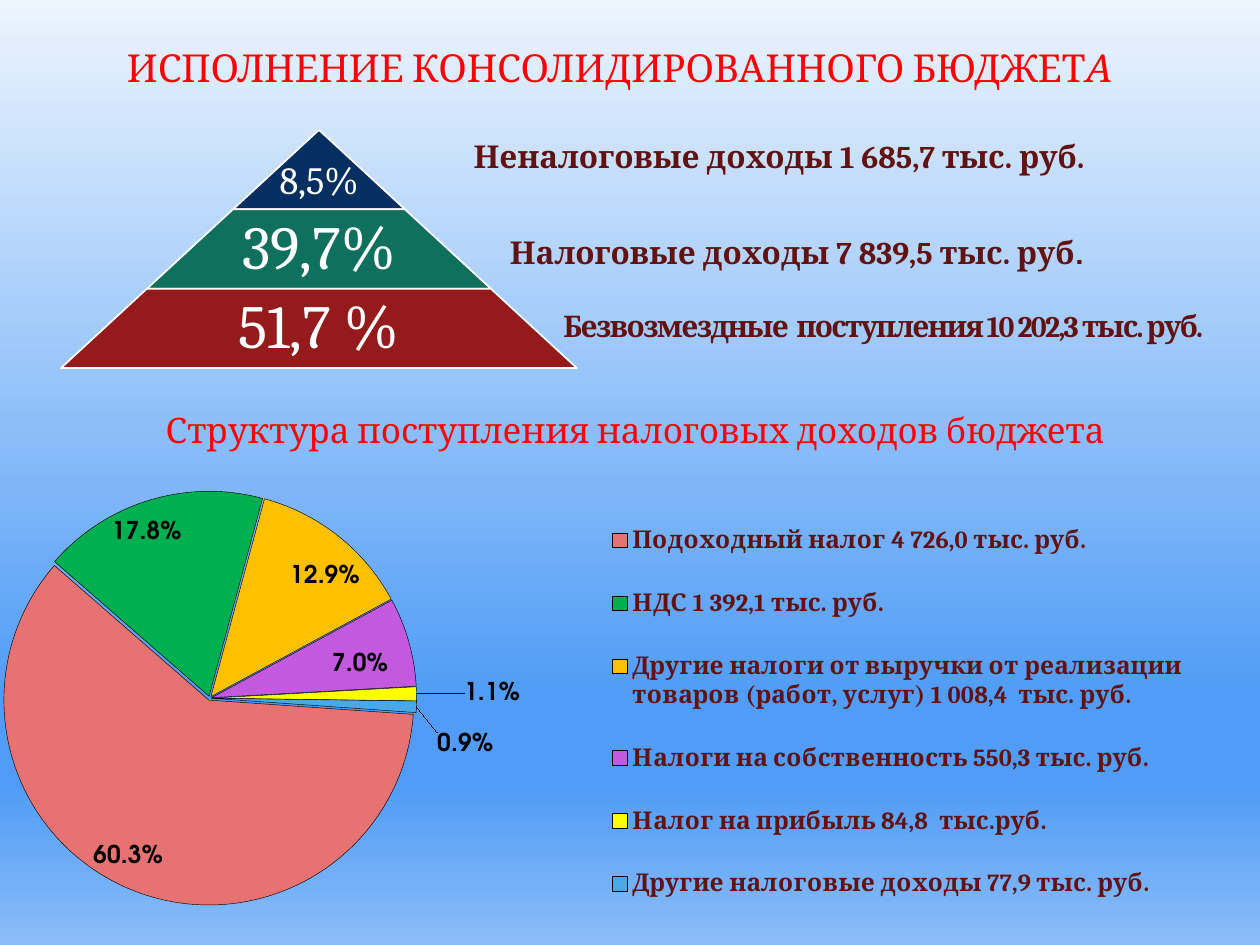
from pptx import Presentation
from pptx.chart.data import CategoryChartData
from pptx.dml.color import RGBColor
from pptx.enum.chart import XL_CHART_TYPE, XL_LABEL_POSITION as LabelPosition, XL_LEGEND_POSITION
from pptx.enum.shapes import MSO_SHAPE
from pptx.enum.text import MSO_ANCHOR as Anchor, PP_ALIGN as Align
from pptx.oxml import parse_xml
from pptx.oxml.ns import nsdecls, qn
from pptx.util import Cm, Pt

SERIF, SANS = "Cambria", "TeX Gyre Adventor"
RED, MAROON, WHITE, BLACK = "FF0000", "631212", "FFFFFF", "000000"

BACKGROUND_STOPS = [(0, "ECF4FE"), (74, "509CF6"), (83, "509CF6"), (100, "8BBDF9")]

# text, size, fill, top inset in cm; from the peak to the base
PYRAMID_LEVELS = [
    ("8,5%", 22, "052F61", 0.54),
    ("39,7%", 35, "0F705D", 0.15),
    ("51,7 %", 35, "941A1B", 0.15),
]

# name, share, fill, label position, label shift as a share of the chart
TAXES = [
    ("Подоходный налог 4 726,0 тыс. руб.", 0.603, "E67272",
     LabelPosition.INSIDE_END, (-0.03, -0.03)),
    ("НДС 1 392,1 тыс. руб.", 0.178, "00B050", LabelPosition.INSIDE_END, (-0.03, 0.03)),
    ("Другие налоги от выручки от реализации товаров (работ, услуг) 1 008,4  тыс. руб.",
     0.129, "FFC000", LabelPosition.INSIDE_END, (0.02, 0.05)),
    ("Налоги на собственность 550,3 тыс. руб.", 0.07, "C259DF",
     LabelPosition.INSIDE_END, (-0.01, 0.02)),
    ("Налог на прибыль 84,8  тыс.руб.", 0.011, "FFFF00",
     LabelPosition.OUTSIDE_END, (0.03, 0)),
    ("Другие налоговые доходы 77,9 тыс. руб.", 0.009, "4AA8E7",
     LabelPosition.OUTSIDE_END, (0.01, 0.08)),
]


def color(value):
    return RGBColor.from_string(value)


def set_font(font, size, value, name=SERIF, bold=False, italic=False):
    font.size, font.name, font.bold, font.italic = Pt(size), name, bold, italic
    font.color.rgb = color(value)


def add_text(slide, box, runs, size, value, bold=False, align=Align.LEFT, anchor=Anchor.TOP,
             insets=(0.25, 0.13, 0.25, 0.13), before=0, line=1.0, spacing=0):
    """Add one paragraph; runs is a string or a list of (text, font overrides)."""
    frame = slide.shapes.add_textbox(*map(Cm, box)).text_frame
    frame.word_wrap = True
    frame.vertical_anchor = anchor
    (frame.margin_left, frame.margin_top,
     frame.margin_right, frame.margin_bottom) = map(Cm, insets)
    paragraph = frame.paragraphs[0]
    paragraph.alignment, paragraph.line_spacing = align, line
    paragraph.space_before = Pt(before)
    for text, overrides in [(runs, {})] if isinstance(runs, str) else runs:
        run = paragraph.add_run()
        run.text = text
        set_font(run.font, size, value, **{"bold": bold, **overrides})
        if spacing:
            run.font._element.set("spc", str(spacing * 100))


def set_background(slide):
    fill = slide.background.fill
    fill.gradient()
    fill.gradient_angle = 270
    stop_list = slide.background._cSld.find(".//" + qn("a:gsLst"))
    for stop in list(stop_list):
        stop_list.remove(stop)
    for position, value in BACKGROUND_STOPS:
        stop_list.append(parse_xml(
            f'<a:gs {nsdecls("a")} pos="{position * 1000}"><a:srgbClr val="{value}"/></a:gs>'))


def add_pyramid(slide, left, top, width, height):
    level_height = height / len(PYRAMID_LEVELS)
    step = width / len(PYRAMID_LEVELS)
    for index, (text, size, fill, top_inset) in enumerate(PYRAMID_LEVELS):
        level_width = step * (index + 1)
        box = (left + (width - level_width) / 2, top + index * level_height,
               level_width, level_height)
        shape = slide.shapes.add_shape(MSO_SHAPE.TRAPEZOID, *map(Cm, box))
        shape.adjustments[0] = step / 2 / level_height
        shape.shadow.inherit = False
        shape.fill.solid()
        shape.fill.fore_color.rgb = color(fill)
        shape.line.color.rgb = color(WHITE)
        shape.line.width = Pt(1)
        add_text(slide, box, text, size, WHITE, align=Align.CENTER, anchor=Anchor.MIDDLE,
                 insets=(0.03, top_inset, 0.03, 0.03 if index == 0 else 0.13), line=0.9)


def add_income_labels(slide):
    style = {"value": MAROON, "bold": True}
    add_text(slide, (9.3, 2.64, 13.41, 1.02), "Неналоговые доходы 1 685,7 тыс. руб.", 18, **style)
    add_text(slide, (10.03, 4.57, 14.4, 1.02),
             [("Налоговые доходы 7 839,5 тыс. руб", {}), (".", {"name": SANS})], 18, **style)
    add_text(slide, (11.1, 6.07, 14, 0.99),
             "Безвозмездные  поступления 10 202,3 тыс. руб.", 17, spacing=-1, **style)


def make_layout(x, y, width=None, height=None, inner=False):
    """Manual chart layout; without a size, x and y shift the part from its usual place."""
    parts = [("layoutTarget", "inner")] if inner else []
    if width:
        parts += [("xMode", "edge"), ("yMode", "edge")]
    parts += [("x", x), ("y", y)]
    if width:
        parts += [("w", width), ("h", height)]
    body = "".join(f'<c:{tag} val="{value}"/>' for tag, value in parts)
    return parse_xml(f'<c:layout {nsdecls("c")}><c:manualLayout>{body}</c:manualLayout></c:layout>')


def format_slices(series):
    series._element.find(qn("c:tx")).addnext(
        parse_xml(f'<c:explosion {nsdecls("c")} val="1"/>'))
    for index, (_, _, fill, _, _) in enumerate(TAXES):
        slice_format = series.points[index].format
        slice_format.fill.solid()
        slice_format.fill.fore_color.rgb = color(fill)
        slice_format.line.color.rgb = color(BLACK)
        slice_format.line.width = Pt(0.25)


def format_labels(series):
    labels = series.data_labels
    labels.show_value = True
    labels.number_format, labels.number_format_is_linked = "0.0%", False
    set_font(labels.font, 14, BLACK, SANS, bold=True)
    for index, (_, _, _, position, shift) in enumerate(TAXES):
        label = series.points[index].data_label
        set_font(label.font, 14, BLACK, SANS, bold=True)
        label.position = position
        element = next(item for item in labels._element.findall(qn("c:dLbl"))
                       if item.find(qn("c:idx")).get("val") == str(index))
        element.find(qn("c:idx")).addnext(make_layout(*shift))


def add_tax_chart(slide, left, top, width, height):
    data = CategoryChartData(number_format="0.0%")
    data.categories = [tax[0] for tax in TAXES]
    data.add_series("Series 1", [tax[1] for tax in TAXES])
    chart = slide.shapes.add_chart(
        XL_CHART_TYPE.PIE, *map(Cm, (left, top, width, height)), data).chart
    chart.has_title = False
    set_font(chart.font, 18, "146194", SANS)
    plot = chart.plots[0]
    plot.vary_by_categories = True
    format_slices(plot.series[0])
    format_labels(plot.series[0])

    pie = plot._element
    for angle in pie.findall(qn("c:firstSliceAng")):
        pie.remove(angle)
    pie.append(parse_xml(f'<c:firstSliceAng {nsdecls("c")} val="94"/>'))
    plot_area = pie.getparent()
    for layout in plot_area.findall(qn("c:layout")):
        plot_area.remove(layout)
    plot_area.insert(0, make_layout(0.07, 0, 0.31, 0.92, inner=True))

    chart.has_legend = True
    legend = chart.legend
    legend.position = XL_LEGEND_POSITION.RIGHT
    legend.include_in_layout = False
    set_font(legend.font, 14, MAROON, bold=True)
    for layout in legend._element.findall(qn("c:layout")):
        legend._element.remove(layout)
    legend._element.find(qn("c:legendPos")).addnext(make_layout(0.51, 0.02, 0.46, 0.94))


def main():
    presentation = Presentation()
    presentation.slide_width, presentation.slide_height = Cm(25.4), Cm(19.05)
    slide = presentation.slides.add_slide(presentation.slide_layouts[6])
    set_background(slide)
    add_text(slide, (2.31, 0.11, 22.4, 1.83),
             [("ИСПОЛНЕНИЕ КОНСОЛИДИРОВАННОГО БЮДЖЕТ", {}), ("А", {"italic": True})],
             22, RED, anchor=Anchor.BOTTOM)
    add_text(slide, (2.01, 8.1, 21.59, 3.89), "Структура поступления налоговых доходов бюджета",
             20, RED, align=Align.CENTER, before=4)
    add_pyramid(slide, 1.23, 2.62, 10.4, 4.8)
    add_income_labels(slide)
    add_tax_chart(slide, -1.83, 9.73, 26.92, 9.45)
    presentation.save("out.pptx")


if __name__ == "__main__":
    main()
